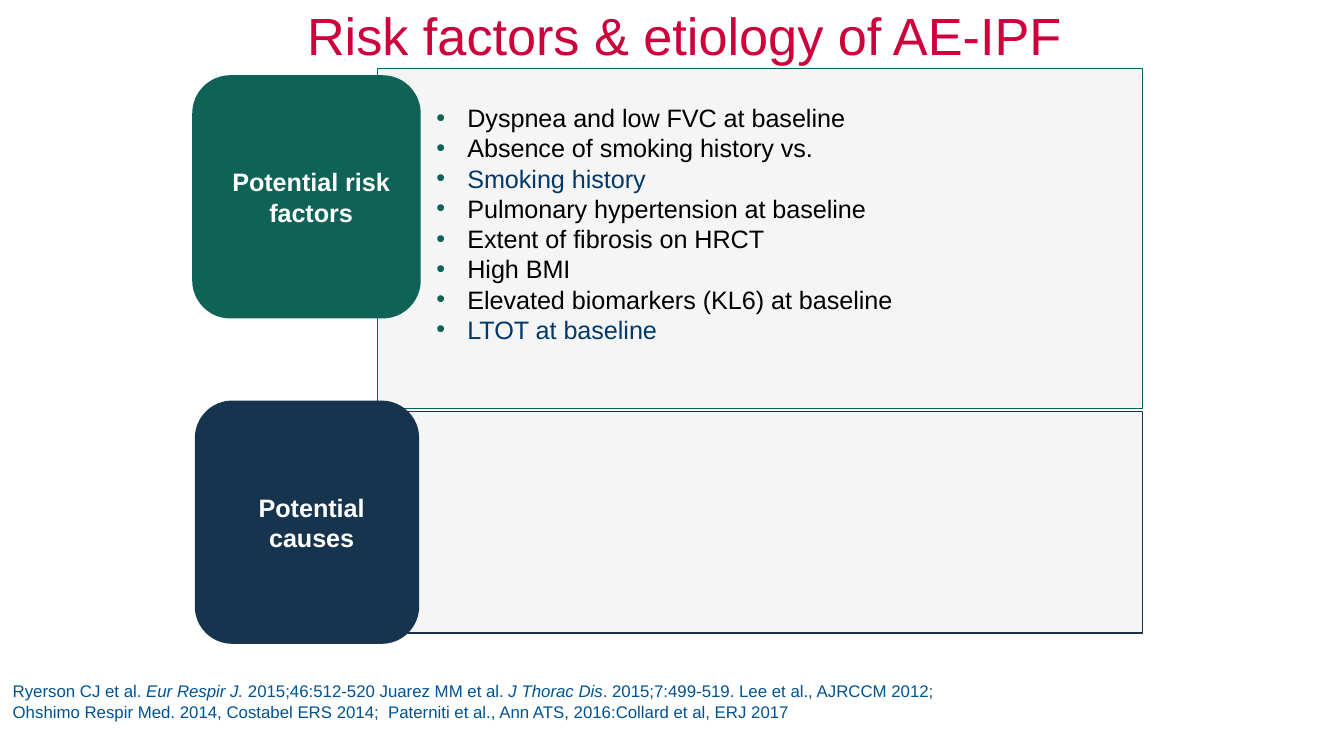
from dataclasses import dataclass

from lxml import etree
from pptx import Presentation
from pptx.dml.color import RGBColor
from pptx.enum.shapes import MSO_SHAPE
from pptx.enum.text import MSO_ANCHOR, PP_ALIGN
from pptx.oxml.ns import qn
from pptx.util import Pt

RECTANGLE = MSO_SHAPE.RECTANGLE
ROUNDED = MSO_SHAPE.ROUNDED_RECTANGLE
MIDDLE = MSO_ANCHOR.MIDDLE
LEFT, CENTER = PP_ALIGN.LEFT, PP_ALIGN.CENTER

GREEN = RGBColor(0x0F, 0x62, 0x56)
NAVY = RGBColor(0x16, 0x34, 0x4E)
PANEL_GREY = RGBColor(0xF5, 0xF5, 0xF5)
BLACK = RGBColor(0, 0, 0)
WHITE = RGBColor(0xFF, 0xFF, 0xFF)
HIGHLIGHT = RGBColor(0x00, 0x39, 0x6A)
REFERENCE_BLUE = RGBColor(0x00, 0x52, 0x91)
TITLE_RED = RGBColor(0xCE, 0x00, 0x3C)

FONT = "Arial"
BODY_SIZE = 13.5
PANEL_LEFT, PANEL_WIDTH = 202.3, 409.7
LABEL_HEIGHT = 130.3


@dataclass(frozen=True)
class Factor:
    text: str
    color: RGBColor = BLACK


@dataclass(frozen=True)
class Section:
    label: str
    color: RGBColor
    panel_top: float
    panel_height: float
    label_left: float
    label_top: float
    label_width: float
    factors: tuple[Factor, ...] = ()


@dataclass(frozen=True)
class Span:
    text: str
    italic: bool = False


SECTIONS = (
    Section("Potential risk factors", GREEN, 36.7, 182.2, 103, 40.3, 122.4, (
        Factor("Dyspnea and low FVC at baseline"),
        Factor("Absence of smoking history vs."),
        Factor("Smoking history", HIGHLIGHT),
        Factor("Pulmonary hypertension at baseline"),
        Factor("Extent of fibrosis on HRCT"),
        Factor("High BMI"),
        Factor("Elevated biomarkers (KL6) at baseline"),
        Factor("LTOT at baseline", HIGHLIGHT),
    )),
    Section("Potential causes", NAVY, 220.3, 118.8, 104.4, 214.6, 120.2),
)

REFERENCES = (
    (
        Span("Ryerson CJ et al. "),
        Span("Eur Respir J.", True),
        Span(" 2015;46:512-520 Juarez MM et al. "),
        Span("J Thorac Dis", True),
        Span(". 2015;7:499-519. Lee et al., AJRCCM 2012;"),
    ),
    (Span("Ohshimo Respir Med. 2014, Costabel ERS 2014;  "
          "Paterniti et al., Ann ATS, 2016:Collard et al, ERJ 2017"),),
)


def add_span(paragraph, text: str, size: float, color: RGBColor,
             bold: bool = False, italic: bool = False) -> None:
    span = paragraph.add_run()
    span.text = text
    span.font.name = FONT
    span.font.size = Pt(size)
    span.font.color.rgb = color
    span.font.bold = bold
    span.font.italic = italic


def next_paragraph(frame, index: int):
    return frame.add_paragraph() if index else frame.paragraphs[0]


def indent(paragraph, margin: float, hanging: float = 0) -> None:
    properties = paragraph._p.get_or_add_pPr()
    properties.set("marL", str(Pt(margin)))
    properties.set("indent", str(-Pt(hanging)))


def add_bullet(paragraph, color: RGBColor) -> None:
    properties = paragraph._p.get_or_add_pPr()
    bullet_color = etree.SubElement(properties, qn("a:buClr"))
    etree.SubElement(bullet_color, qn("a:srgbClr"), val=str(color))
    etree.SubElement(properties, qn("a:buFont"), typeface=FONT)
    etree.SubElement(properties, qn("a:buChar"), char="•")


def add_block(page, kind, left: float, top: float, width: float, height: float,
              fill: RGBColor):
    block = page.shapes.add_shape(kind, Pt(left), Pt(top), Pt(width), Pt(height))
    block.shadow.inherit = False
    block.fill.solid()
    block.fill.fore_color.rgb = fill
    block.line.fill.background()
    block.text_frame.word_wrap = True
    block.text_frame.vertical_anchor = MIDDLE
    return block


def add_section(page, section: Section) -> None:
    panel = add_block(page, RECTANGLE, PANEL_LEFT, section.panel_top,
                      PANEL_WIDTH, section.panel_height, PANEL_GREY)
    panel.line.color.rgb = section.color
    panel.line.width = Pt(0.75)
    # The list sits half a line above the middle of its panel.
    panel.text_frame.margin_bottom = Pt(19.7)
    for index, factor in enumerate(section.factors):
        paragraph = next_paragraph(panel.text_frame, index)
        paragraph.alignment = LEFT
        indent(paragraph, 41, 16.6)
        add_bullet(paragraph, section.color)
        add_span(paragraph, factor.text, BODY_SIZE, factor.color)

    label = add_block(page, ROUNDED, section.label_left, section.label_top,
                      section.label_width, LABEL_HEIGHT, section.color)
    paragraph = label.text_frame.paragraphs[0]
    paragraph.alignment = CENTER
    indent(paragraph, 5)
    add_span(paragraph, section.label, BODY_SIZE, WHITE, bold=True)


def add_text_box(page, left: float, top: float, width: float, height: float):
    box = page.shapes.add_textbox(Pt(left), Pt(top), Pt(width), Pt(height))
    box.text_frame.word_wrap = True
    return box.text_frame


def add_references(page) -> None:
    frame = add_text_box(page, 0, 361.4, 600, 28.8)
    frame.margin_left = Pt(6.8)
    for index, spans in enumerate(REFERENCES):
        paragraph = next_paragraph(frame, index)
        for span in spans:
            add_span(paragraph, span.text, 9, REFERENCE_BLUE, italic=span.italic)


def add_title(page) -> None:
    frame = add_text_box(page, 42.5, 0, 648, 37.4)
    frame.margin_top = frame.margin_bottom = Pt(0)
    frame.vertical_anchor = MIDDLE
    paragraph = frame.paragraphs[0]
    paragraph.alignment = CENTER
    add_span(paragraph, "Risk factors & etiology of AE-IPF", 28, TITLE_RED)


def main() -> None:
    deck = Presentation()
    deck.slide_width, deck.slide_height = Pt(720), Pt(405)
    page = deck.slides.add_slide(deck.slide_layouts[6])
    for section in SECTIONS:
        add_section(page, section)
    add_references(page)
    add_title(page)
    deck.save("out.pptx")


if __name__ == "__main__":
    main()
